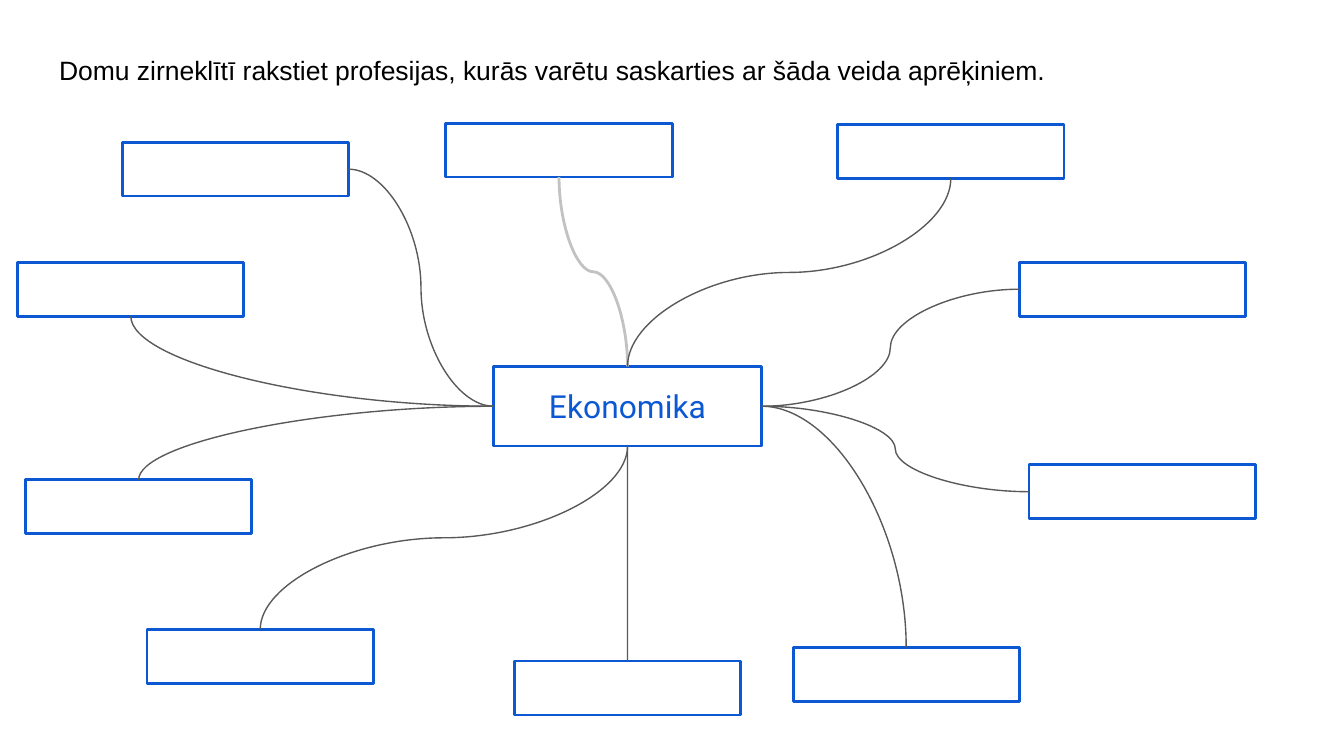
from lxml import etree
from pptx import Presentation
from pptx.dml.color import RGBColor
from pptx.enum.shapes import MSO_CONNECTOR as Connector, MSO_SHAPE as Shape
from pptx.enum.text import MSO_ANCHOR as Anchor, MSO_AUTO_SIZE as AutoSize, PP_ALIGN as Align
from pptx.oxml.ns import qn
from pptx.util import Pt

COLORS = {"blue": "0C58D3", "gray": "595959", "light": "C2C2C2", "text": "000000"}

TITLE_BOX = (24.5, 21.6, 671, 45.4)
HUB_BOX = (264.4, 196.3, 143.6, 42.7)
LEAF_SIZE = (121.2, 28.9)
LEAVES = {
    "left upper": (9.5, 140.5),
    "top right": (448.8, 66.7),
    "right upper": (546, 140.5),
    "right lower": (551.3, 249),
    "bottom right": (424.9, 346.8),
    "bottom": (275.6, 354.2),
    "left lower": (13.7, 257.1),
    "bottom left": (78.8, 337.2),
    "top left": (65.5, 76.2),
    "top": (238.9, 66),
}
# start box, start side, end box, end side
LINKS = [
    ("hub", "top", "top", "bottom"),
    ("hub", "top", "top right", "bottom"),
    ("hub", "right", "right upper", "left"),
    ("hub", "right", "right lower", "left"),
    ("hub", "right", "bottom right", "top"),
    ("bottom", "top", "hub", "bottom"),
    ("bottom left", "top", "hub", "bottom"),
    ("left lower", "top", "hub", "left"),
    ("left upper", "bottom", "hub", "left"),
    ("top left", "right", "hub", "left"),
]
SIDES = ["top", "left", "bottom", "right"]  # order of a rectangle's connection sites
ROTATIONS = {"right": 0, "bottom": 90, "left": 180, "top": 270}


def rgb(name):
    return RGBColor.from_string(COLORS[name])


def add_run(paragraph, text, font, size, color):
    run = paragraph.add_run()
    run.text = text
    run.font.name, run.font.size = font, Pt(size)
    run.font.color.rgb = rgb(color)


def set_margins(frame, margin):
    frame.margin_left = frame.margin_right = Pt(margin)
    frame.margin_top = frame.margin_bottom = Pt(margin)


def place_title(slide, box, text):
    title = slide.shapes.title
    title.left, title.top, title.width, title.height = map(Pt, box)
    frame = title.text_frame
    frame.word_wrap, frame.auto_size = True, AutoSize.NONE
    frame.vertical_anchor = Anchor.TOP
    set_margins(frame, 7.2)
    paragraph = frame.paragraphs[0]
    paragraph.alignment = Align.LEFT
    add_run(paragraph, text, "Arial", 14.2, "text")


def add_box(slide, box):
    shape = slide.shapes.add_shape(Shape.RECTANGLE, *map(Pt, box))
    shape.shadow.inherit = False
    shape.fill.background()
    shape.line.color.rgb = rgb("blue")
    shape.line.width = Pt(1.5)
    return shape


def add_hub(slide, box, text):
    hub = add_box(slide, box)
    frame = hub.text_frame
    frame.word_wrap, frame.vertical_anchor = True, Anchor.MIDDLE
    set_margins(frame, 7.2)
    paragraph = frame.paragraphs[0]
    paragraph.alignment = Align.CENTER
    add_run(paragraph, text, "Roboto", 17, "blue")
    return hub


def add_curve(slide, start, start_side, end, end_side, color, width):
    """Glue a curve that leaves the start box at right angles to its side."""
    curve = slide.shapes.add_connector(Connector.CURVE, 0, 0, 0, 0)
    curve.begin_connect(start, SIDES.index(start_side))
    curve.end_connect(end, SIDES.index(end_side))
    curve.line.color.rgb, curve.line.width = rgb(color), Pt(width)
    properties = curve.element.spPr
    etree.SubElement(properties, qn("a:effectLst"))

    across = {"left", "right"}
    if (start_side in across) != (end_side in across):
        properties.find(qn("a:prstGeom")).set("prst", "curvedConnector2")

    x1, y1, x2, y2 = curve.begin_x, curve.begin_y, curve.end_x, curve.end_y
    dx, dy = x2 - x1, y2 - y1
    # Sideways offset of the end, seen along the direction of departure
    sideways = {"right": dy, "bottom": -dx, "left": -dy, "top": dx}[start_side]
    length, breadth = abs(dx), abs(dy)
    if start_side not in across:
        length, breadth = breadth, length
    curve.left, curve.top = (x1 + x2 - length) // 2, (y1 + y2 - breadth) // 2
    curve.width, curve.height = length, breadth

    rotation, mirrored = ROTATIONS[start_side], sideways < 0
    if mirrored:
        rotation = (rotation + 180) % 360
    frame = properties.find(qn("a:xfrm"))
    frame.set("rot", str(rotation * 60000))
    frame.set("flipH", str(int(mirrored)))
    frame.set("flipV", "0")


def build_mind_map(slide):
    boxes = {"hub": add_hub(slide, HUB_BOX, "Ekonomika")}
    for name, position in LEAVES.items():
        boxes[name] = add_box(slide, position + LEAF_SIZE)
    for start, start_side, end, end_side in LINKS:
        color, width = ("light", 1.5) if end == "top" else ("gray", 0.75)
        add_curve(slide, boxes[start], start_side, boxes[end], end_side, color, width)


def main():
    presentation = Presentation()
    presentation.slide_width, presentation.slide_height = Pt(720), Pt(405)
    slide = presentation.slides.add_slide(presentation.slide_layouts[5])
    place_title(slide, TITLE_BOX,
                "Domu zirneklītī rakstiet profesijas, kurās varētu saskarties "
                "ar šāda veida aprēķiniem.")
    build_mind_map(slide)
    presentation.save("out.pptx")


if __name__ == "__main__":
    main()
